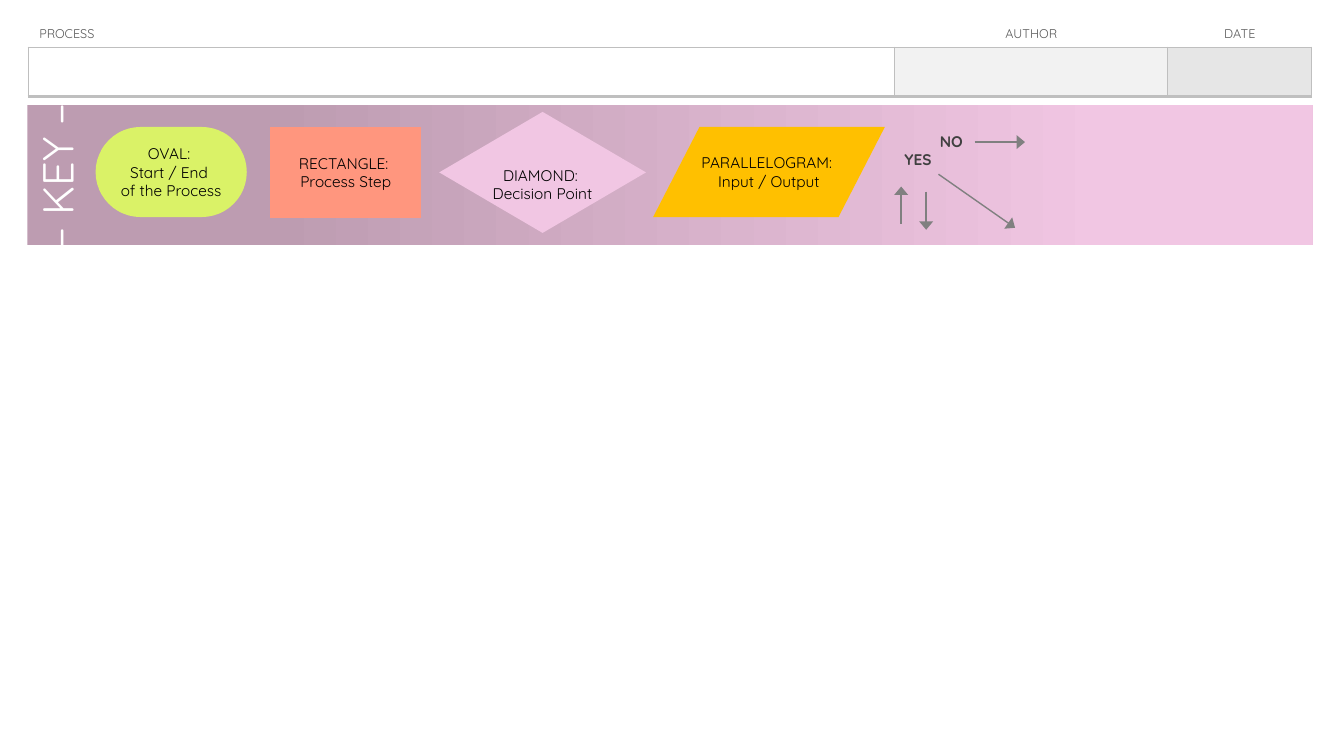
from dataclasses import dataclass

from lxml import etree
from pptx import Presentation
from pptx.dml.color import RGBColor
from pptx.enum.shapes import MSO_CONNECTOR, MSO_SHAPE
from pptx.enum.text import MSO_ANCHOR, PP_ALIGN
from pptx.oxml.ns import qn
from pptx.util import Cm, Pt

CENTER, LEFT = PP_ALIGN.CENTER, PP_ALIGN.LEFT
MIDDLE, BOTTOM = MSO_ANCHOR.MIDDLE, MSO_ANCHOR.BOTTOM
STRAIGHT = MSO_CONNECTOR.STRAIGHT
RECT, OVAL = MSO_SHAPE.RECTANGLE, MSO_SHAPE.ROUNDED_RECTANGLE
PROCESS = MSO_SHAPE.FLOWCHART_PROCESS
DECISION = MSO_SHAPE.FLOWCHART_DECISION
DATA = MSO_SHAPE.FLOWCHART_DATA


@dataclass(frozen=True)
class Theme:
    font: str = "Quicksand"
    white: str = "FFFFFF"
    black: str = "000000"
    header: str = "595959"
    label: str = "404040"
    arrow: str = "808080"
    border: str = "BFBFBF"
    mauve: str = "BD9CB1"
    pink: str = "F1C6E3"
    lime: str = "DAF267"
    coral: str = "FF967E"
    amber: str = "FFC000"
    fields: tuple = ("FFFFFF", "F2F2F2", "E6E6E6")
    header_size: float = 9
    body_size: float = 11
    key_size: float = 31


THEME = Theme()


def rgb(value):
    return RGBColor.from_string(value)


def write(tf, text, size, color, bold=False, align=CENTER):
    tf.text = text
    for p in tf.paragraphs:
        p.alignment = align
        p.font.name = THEME.font
        p.font.size = Pt(size)
        p.font.bold = bold
        p.font.color.rgb = rgb(color)


def set_frame(tf, inset, anchor=MIDDLE):
    tf.word_wrap = True
    tf.vertical_anchor = anchor
    tf.margin_left = tf.margin_right = Cm(inset)
    tf.margin_top = tf.margin_bottom = Cm(inset)


def add_block(s, kind, box):
    sp = s.shapes.add_shape(kind, *map(Cm, box))
    sp.shadow.inherit = False
    sp.line.fill.background()
    return sp


def add_band(s, box):
    sp = add_block(s, RECT, box)
    sp.fill.gradient()
    sp.fill.gradient_angle = 0
    stops = ((0.19, THEME.mauve), (0.84, THEME.pink))
    for stop, (position, color) in zip(sp.fill.gradient_stops, stops):
        stop.position = position
        stop.color.rgb = rgb(color)


def add_symbol(s, kind, box, color, text, inset=0.05, anchor=MIDDLE):
    sp = add_block(s, kind, box)
    sp.fill.solid()
    sp.fill.fore_color.rgb = rgb(color)
    set_frame(sp.text_frame, inset, anchor)
    write(sp.text_frame, text, THEME.body_size, THEME.black)
    return sp


def add_label(s, box, text, size, color, bold=False, rotation=0):
    sp = s.shapes.add_textbox(*map(Cm, box))
    sp.rotation = rotation
    set_frame(sp.text_frame, 0.05)
    write(sp.text_frame, text, size, color, bold)


def add_arrow(s, start, end):
    c = s.shapes.add_connector(STRAIGHT, *map(Cm, start + end))
    c.line.color.rgb = rgb(THEME.arrow)
    c.line.width = Pt(1)
    sp_pr = c._element.spPr
    etree.SubElement(sp_pr.find(qn("a:ln")), qn("a:tailEnd"), type="triangle", w="lg", len="med")
    etree.SubElement(sp_pr, qn("a:effectLst"))


def set_borders(cell, widths):
    tc_pr = cell._tc.get_or_add_tcPr()
    for i, (side, width) in enumerate(widths):
        ln = etree.Element(qn(f"a:ln{side}"), w=str(Pt(width)))
        fill = etree.SubElement(ln, qn("a:solidFill"))
        etree.SubElement(fill, qn("a:srgbClr"), val=THEME.border)
        tc_pr.insert(i, ln)


def add_header_table(s):
    widths, heights = (21.84, 6.88, 3.63), (0.71, 1.24)
    frame = s.shapes.add_table(2, 3, Cm(0.71), Cm(0.48), Cm(sum(widths)), Cm(sum(heights)))
    table = frame.table
    table.first_row = table.horz_banding = False
    for row, height in zip(table.rows, heights):
        row.height = Cm(height)
    columns = (("PROCESS", LEFT, 0.28), ("AUTHOR", CENTER, 0.03), ("DATE", CENTER, 0.03))
    for i, (title, align, indent) in enumerate(columns):
        table.columns[i].width = Cm(widths[i])
        head, field = table.cell(0, i), table.cell(1, i)
        head.fill.background()
        head.vertical_anchor = MIDDLE
        head.margin_left, head.margin_right = Cm(indent), Cm(0.03)
        head.margin_top, head.margin_bottom = Cm(0.03), 0
        write(head.text_frame, title, THEME.header_size, THEME.header, align=align)
        set_borders(head, [("B", 1)])
        field.fill.solid()
        field.fill.fore_color.rgb = rgb(THEME.fields[i])
        set_borders(field, [("L", 1), ("R", 1), ("T", 1), ("B", 2.25)])


def main():
    prs = Presentation()
    prs.slide_width, prs.slide_height = Cm(33.87), Cm(19.05)
    s = prs.slides.add_slide(prs.slide_layouts[6])

    add_band(s, (0.69, 2.64, 32.39, 3.53))
    add_header_table(s)
    add_label(s, (-0.61, 3.81, 4.06, 1.27), "– KEY –", THEME.key_size, THEME.white, rotation=270)

    oval = add_symbol(s, OVAL, (2.41, 3.2, 3.81, 2.27), THEME.lime,
                      "OVAL: \nStart / End \nof the Process")
    oval.adjustments[0] = 0.5
    add_symbol(s, PROCESS, (6.81, 3.2, 3.81, 2.29), THEME.coral, "RECTANGLE: \nProcess Step")
    add_symbol(s, DATA, (16.46, 3.2, 5.84, 2.27), THEME.amber,
               "PARALLELOGRAM: \nInput / Output", inset=0)
    add_symbol(s, DECISION, (11.07, 2.82, 5.21, 3.05), THEME.pink,
               "DIAMOND: \nDecision Point", inset=0, anchor=BOTTOM)

    for text, left, top in (("YES", 22.35, 3.45), ("NO", 23.19, 3.0)):
        add_label(s, (left, top, 1.57, 1.14), text, THEME.body_size, THEME.label, bold=True)
    for start, end in (
        ((23.65, 4.39), (25.58, 5.74)),
        ((24.56, 3.58), (25.83, 3.58)),
        ((22.71, 5.64), (22.71, 4.7)),
        ((23.34, 4.83), (23.34, 5.79)),
    ):
        add_arrow(s, start, end)

    prs.save("out.pptx")


if __name__ == "__main__":
    main()
